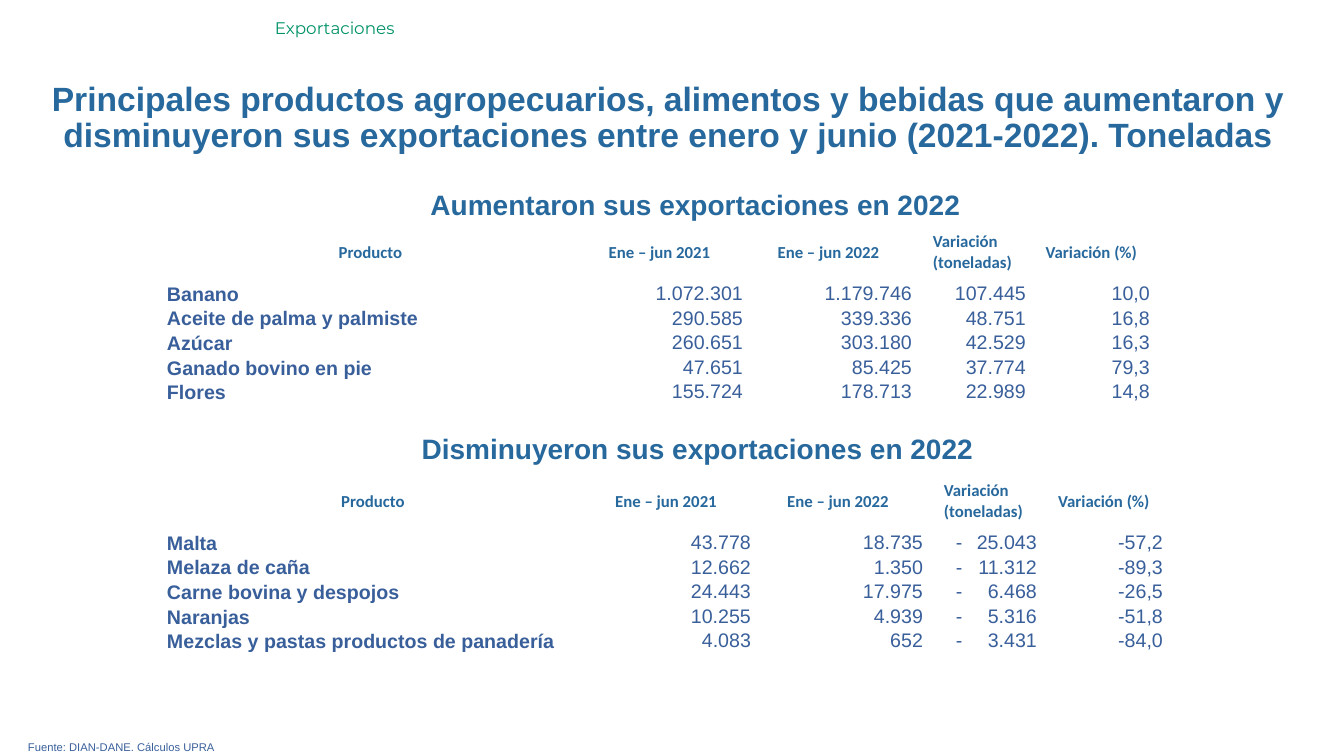
from dataclasses import dataclass

from lxml import etree
from pptx import Presentation
from pptx.dml.color import RGBColor
from pptx.enum.text import MSO_ANCHOR, MSO_AUTO_SIZE, PP_ALIGN
from pptx.oxml.ns import qn
from pptx.util import Emu, Pt

EMU_PER_PX = 914400 / 100.8
LEFT, CENTER, RIGHT = PP_ALIGN.LEFT, PP_ALIGN.CENTER, PP_ALIGN.RIGHT
JUSTIFY = PP_ALIGN.JUSTIFY
MIDDLE, BOTTOM = MSO_ANCHOR.MIDDLE, MSO_ANCHOR.BOTTOM
NO_AUTOFIT = MSO_AUTO_SIZE.NONE

GREEN = RGBColor(0x00, 0x92, 0x67)
BLUE = RGBColor(0x27, 0x68, 0x9D)
SLATE = RGBColor(0x39, 0x5F, 0x9B)

TABLE_LEFT = 166
HEADER_HEIGHT, ROW_HEIGHT = 58, 20
HEADERS = ("Producto", "Ene – jun 2021", "Ene – jun 2022",
           "Variación (toneladas)", "Variación (%)")
TONNES_COLUMN = 3
TONNES_HEADER_INDENT = 20
TONNES_RIGHT_MARGIN = 6
MINUS_TAB, NUMBER_TAB = 31, 112


@dataclass(frozen=True)
class TextStyle:
    size: int
    color: RGBColor
    font: str = "Arial"
    bold: bool = False


@dataclass(frozen=True)
class Label:
    text: str
    left: int
    top: int
    width: int
    height: int
    style: TextStyle
    align: PP_ALIGN


@dataclass(frozen=True)
class ExportTable:
    top: int
    columns: tuple[int, ...]
    rows: tuple[tuple[str, ...], ...]


TITLE_STYLE = TextStyle(24, BLUE, bold=True)
HEADING_STYLE = TextStyle(20, BLUE, bold=True)
HEADER_STYLE = TextStyle(12, BLUE, "Calibri", True)
PRODUCT_STYLE = TextStyle(14, SLATE, bold=True)
NUMBER_STYLE = TextStyle(14, SLATE)

TITLE = Label(
    "Principales productos agropecuarios, alimentos y bebidas que aumentaron y "
    "disminuyeron sus exportaciones entre enero y junio (2021-2022). Toneladas",
    0, 52, 1336, 133, TITLE_STYLE, CENTER)

LABELS = (
    Label("Exportaciones", 265, 13, 1079, 30,
          TextStyle(12, GREEN, "Montserrat"), LEFT),
    Label("Aumentaron sus exportaciones en 2022", 216, 183, 959, 44,
          HEADING_STYLE, CENTER),
    Label("Disminuyeron sus exportaciones en 2022", 179, 427, 1037, 44,
          HEADING_STYLE, CENTER),
    Label("Fuente: DIAN-DANE. Cálculos UPRA", 18, 735, 1301, 24,
          TextStyle(8, SLATE), JUSTIFY),
)

TABLES = (
    ExportTable(223, (409, 169, 169, 119, 119), (
        ("Banano", "1.072.301", "1.179.746", "107.445", "10,0"),
        ("Aceite de palma y palmiste", "290.585", "339.336", "48.751", "16,8"),
        ("Azúcar", "260.651", "303.180", "42.529", "16,3"),
        ("Ganado bovino en pie", "47.651", "85.425", "37.774", "79,3"),
        ("Flores", "155.724", "178.713", "22.989", "14,8"),
    )),
    ExportTable(472, (414, 172, 172, 120, 120), (
        ("Malta", "43.778", "18.735", "-25.043", "-57,2"),
        ("Melaza de caña", "12.662", "1.350", "-11.312", "-89,3"),
        ("Carne bovina y despojos", "24.443", "17.975", "-6.468", "-26,5"),
        ("Naranjas", "10.255", "4.939", "-5.316", "-51,8"),
        ("Mezclas y pastas productos de panadería",
         "4.083", "652", "-3.431", "-84,0"),
    )),
)


def px(length: int) -> Emu:
    return Emu(round(length * EMU_PER_PX))


def write(para, text: str, style: TextStyle, align: PP_ALIGN) -> None:
    para.alignment = align
    span = para.add_run()
    span.text = text
    span.font.name = style.font
    span.font.size = Pt(style.size)
    span.font.bold = style.bold
    span.font.color.rgb = style.color


def add_tabs(para, stops: tuple[tuple[int, str], ...]) -> None:
    tab_list = etree.SubElement(para._p.get_or_add_pPr(), qn("a:tabLst"))
    for position, align in stops:
        etree.SubElement(tab_list, qn("a:tab"), pos=str(px(position)), algn=align)


def add_title(page, label: Label) -> None:
    box = page.shapes.title
    box.left, box.top = px(label.left), px(label.top)
    box.width, box.height = px(label.width), px(label.height)
    frame = box.text_frame
    frame.auto_size = NO_AUTOFIT
    frame.vertical_anchor = MIDDLE
    frame.paragraphs[0].line_spacing = 0.9
    write(frame.paragraphs[0], label.text, label.style, label.align)


def add_label(page, label: Label) -> None:
    box = page.shapes.add_textbox(px(label.left), px(label.top),
                                  px(label.width), px(label.height))
    box.text_frame.word_wrap = True
    write(box.text_frame.paragraphs[0], label.text, label.style, label.align)


def fill_cell(cell, text: str, column: int, is_header: bool) -> None:
    cell.fill.background()
    cell.margin_left = cell.margin_top = cell.margin_right = px(1)
    cell.margin_bottom = 0
    cell.vertical_anchor = MIDDLE
    para = cell.text_frame.paragraphs[0]
    is_tonnes = column == TONNES_COLUMN
    if is_header:
        if is_tonnes:
            cell.margin_left = px(TONNES_HEADER_INDENT)
        write(para, text, HEADER_STYLE, LEFT if is_tonnes else CENTER)
    elif column == 0:
        cell.vertical_anchor = BOTTOM
        write(para, text, PRODUCT_STYLE, LEFT)
    elif is_tonnes and text.startswith("-"):
        # The minus sign stands apart from the right-aligned number
        add_tabs(para, ((MINUS_TAB, "l"), (NUMBER_TAB, "r")))
        write(para, f"\t-\t{text[1:]}", NUMBER_STYLE, LEFT)
    else:
        if is_tonnes:
            cell.margin_right = px(TONNES_RIGHT_MARGIN)
        write(para, text, NUMBER_STYLE, RIGHT)


def add_export_table(page, data: ExportTable) -> None:
    rows = (HEADERS, *data.rows)
    height = HEADER_HEIGHT + ROW_HEIGHT * len(data.rows)
    table = page.shapes.add_table(
        len(rows), len(HEADERS), px(TABLE_LEFT), px(data.top),
        px(sum(data.columns)), px(height)).table
    table.first_row = table.horz_banding = False
    for column, width in zip(table.columns, data.columns):
        column.width = px(width)
    for r, values in enumerate(rows):
        table.rows[r].height = px(ROW_HEIGHT if r else HEADER_HEIGHT)
        for c, text in enumerate(values):
            fill_cell(table.cell(r, c), text, c, r == 0)


def main() -> None:
    deck = Presentation()
    deck.slide_width, deck.slide_height = px(1344), px(756)
    page = deck.slides.add_slide(deck.slide_layouts.get_by_name("Title Only"))

    # Title, headings and source line
    add_title(page, TITLE)
    for label in LABELS:
        add_label(page, label)

    # Products that rose and fell
    for data in TABLES:
        add_export_table(page, data)

    deck.save("out.pptx")


if __name__ == "__main__":
    main()
